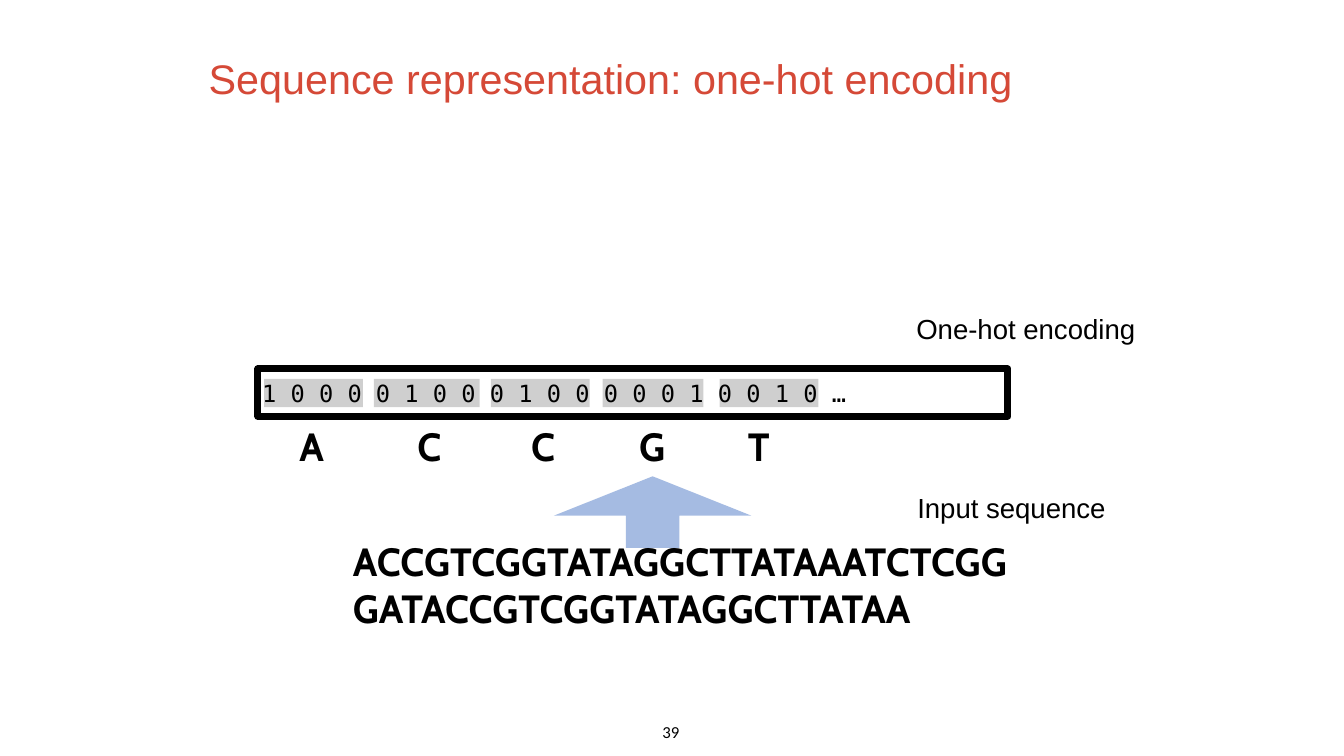
from pptx import Presentation
from pptx.dml.color import RGBColor
from pptx.enum.shapes import MSO_SHAPE
from pptx.enum.text import MSO_ANCHOR, MSO_AUTO_SIZE, PP_ALIGN
from pptx.oxml.ns import qn
from pptx.util import Inches, Pt
from lxml import etree

RECTANGLE, ARROW = MSO_SHAPE.RECTANGLE, MSO_SHAPE.RIGHT_ARROW
TOP, MIDDLE = MSO_ANCHOR.TOP, MSO_ANCHOR.MIDDLE
LEFT, CENTER = PP_ALIGN.LEFT, PP_ALIGN.CENTER
GROW, FIXED = MSO_AUTO_SIZE.SHAPE_TO_FIT_TEXT, MSO_AUTO_SIZE.NONE

# Square grid: 40 columns by 22.5 rows
COLUMNS, ROWS = 40, 22.5
CELL = Inches(7.5) / ROWS

BASES = "ACTG"  # position of the 1 in each code


def color(hex_string):
    return RGBColor.from_string(hex_string)


def one_hot(base):
    return " ".join("1" if base == other else "0" for other in BASES)


class SlideBuilder:
    black, red, blue = "000000", "D54937", "4472C4"
    sans, bold_face, mono, number_face = "Arial", "Cabin", "DejaVu Sans Mono", "Calibri"

    def __init__(self, presentation):
        self.slide = presentation.slides.add_slide(presentation.slide_layouts[6])

    def place(self, left, top, width, height):
        return [round(value * CELL) for value in (left, top, width, height)]

    def fill_text(self, shape, text, face, size, ink=black, bold=False, inset=0.05,
                  anchor=MIDDLE, align=LEFT, wrap=True, fit=FIXED):
        frame = shape.text_frame
        frame.word_wrap, frame.auto_size, frame.vertical_anchor = wrap, fit, anchor
        frame.margin_left = frame.margin_right = Inches(inset)
        frame.margin_top = frame.margin_bottom = Inches(inset)
        paragraph = frame.paragraphs[0]
        paragraph.alignment = align
        run = paragraph.add_run()
        run.text = text
        run.font.name, run.font.size, run.font.bold = face, Pt(size), bold
        run.font.color.rgb = color(ink)

    def text(self, area, text, face, size, **style):
        box = self.slide.shapes.add_textbox(*self.place(*area))
        self.fill_text(box, text, face, size, **style)

    def label(self, area, text):
        self.text(area, text, self.sans, 19.7, inset=0.04, wrap=False, fit=GROW)

    def base(self, area, text):
        self.text(area, text, self.bold_face, 28.1, bold=True)

    def shape(self, kind, area):
        shape = self.slide.shapes.add_shape(kind, *self.place(*area))
        shape.shadow.inherit = False
        return shape

    def frame(self, area, text):
        shape = self.shape(RECTANGLE, area)
        shape.fill.background()
        shape.line.color.rgb = color(self.black)
        shape.line.width = Pt(5)
        self.fill_text(shape, text, self.mono, 16.9, inset=0.04)

    def tint(self, kind, area, fill, opacity):
        shape = self.shape(kind, area)
        shape.line.fill.background()
        shape.fill.solid()
        shape.fill.fore_color.rgb = color(fill)
        fill_color = shape.element.spPr.find(qn("a:solidFill")).find(qn("a:srgbClr"))
        etree.SubElement(fill_color, qn("a:alpha")).set("val", str(opacity * 1000))
        return shape

    def up_arrow(self, area):
        arrow = self.tint(ARROW, area, self.blue, 48)
        arrow.rotation = 270
        arrow.adjustments[0], arrow.adjustments[1] = 0.27, 0.55


def main():
    presentation = Presentation()
    presentation.slide_width = round(COLUMNS * CELL)
    presentation.slide_height = round(ROWS * CELL)
    builder = SlideBuilder(presentation)

    # Title
    builder.text((5.82, 1.17, 27.24, 2.28), "Sequence representation: one-hot encoding",
                 builder.sans, 29.5, ink=builder.red, inset=0.13, fit=GROW)

    # Input sequence
    builder.base((10.35, 16.32, 20.37, 2.13),
                 "ACCGTCGGTATAGGCTTATAAATCTCGGGATACCGTCGGTATAGGCTTATAA")

    # Encoded sequence: base, letter left, band left, band width
    encoded = [("A", 8.76, 7.86, 2.94), ("C", 12.27, 11.13, 3.15),
               ("C", 15.66, 14.61, 2.94), ("G", 18.87, 17.94, 3),
               ("T", 22.11, 21.42, 2.94)]
    codes = [one_hot(base) for base, *_ in encoded]
    builder.frame((7.68, 10.98, 22.32, 1.41), " ".join(codes + ["…"]))
    for base, letter_left, band_left, band_width in encoded:
        builder.base((letter_left, 12.36, 1.17, 1.8), base)
        builder.tint(RECTANGLE, (band_left, 11.28, band_width, 0.84), builder.black, 19)

    # Labels and arrow
    builder.label((27.15, 9.15, 6.84, 1.23), "One-hot encoding")
    builder.label((27.18, 14.49, 5.94, 1.23), "Input sequence")
    builder.up_arrow((18.36, 12.3, 2.13, 5.88))

    # Slide number
    builder.text((19.53, 21.3, 0.87, 0.93), "39", builder.number_face, 12,
                 inset=0.06, anchor=TOP, align=CENTER, wrap=False)

    presentation.save("out.pptx")


if __name__ == "__main__":
    main()
